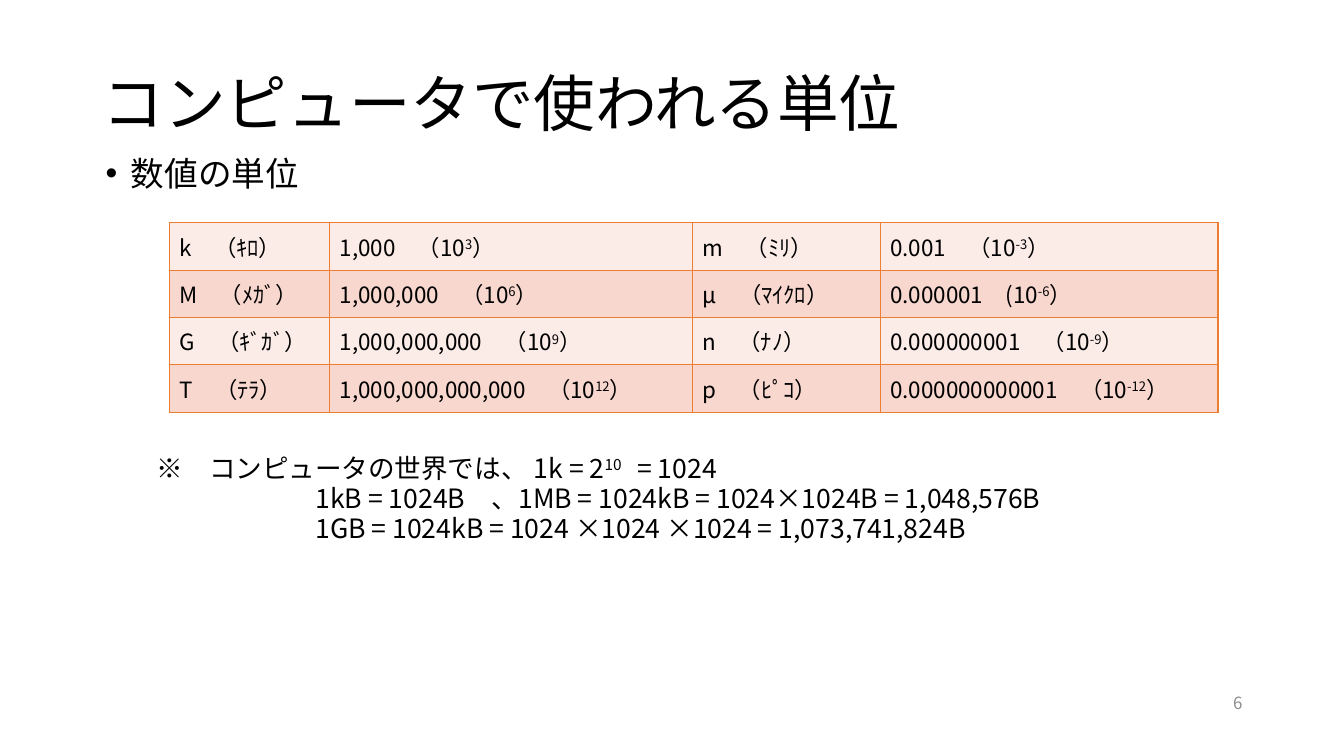
import pptx
import pptx.dml.color
import pptx.enum.text
import pptx.oxml.ns
import pptx.util
from lxml import etree

Inches = pptx.util.Inches
Pt = pptx.util.Pt
RGBColor = pptx.dml.color.RGBColor
ALIGN = pptx.enum.text.PP_ALIGN
ANCHOR = pptx.enum.text.MSO_ANCHOR
qn = pptx.oxml.ns.qn

FONT = "Noto Sans CJK JP"
BLACK = RGBColor(0x00, 0x00, 0x00)
GRAY = RGBColor(0x8C, 0x8C, 0x8C)
ORANGE = RGBColor(0xED, 0x7D, 0x31)
BAND_FILLS = (RGBColor(0xFC, 0xEC, 0xE8), RGBColor(0xF8, 0xD7, 0xCE))

COLUMN_WIDTHS = (1.59, 3.6, 1.86, 3.35)
ROW_HEIGHT = 0.47

# Text between a pair of ^ marks is superscript
UNITS = (
    ("k　（ｷﾛ）", "1,000　（10^3^）", "m　（ﾐﾘ）", "0.001　（10^-3^）"),
    ("M　（ﾒｶﾞ）", "1,000,000　（10^6^）", "μ　（ﾏｲｸﾛ）", "0.000001　(10^-6^）"),
    ("G　（ｷﾞｶﾞ）", "1,000,000,000　（10^9^）", "n　（ﾅﾉ）", "0.000000001　（10^-9^）"),
    ("T　（ﾃﾗ）", "1,000,000,000,000　（10^12^）", "p　（ﾋﾟｺ）", "0.000000000001　（10^-12^）"),
)
# Binary notes: left indent in inches, text
NOTES = (
    (0.5, "※　コンピュータの世界では、 1k = 2^10　^= 1024"),
    (2.08, "1kB = 1024B　、1MB = 1024kB = 1024×1024B = 1,048,576B"),
    (2.08, "1GB = 1024kB = 1024 ×1024 ×1024 = 1,073,741,824B"),
)


def write(paragraph, text, size, color=BLACK, align=ALIGN.LEFT, spacing=1.0,
          before=0, indent=0, hanging=0, bullet=None):
    """Fill one paragraph with formatted text."""
    properties = paragraph._p.get_or_add_pPr()
    properties.set("marL", str(Inches(indent)))
    properties.set("indent", str(-Inches(hanging)))
    if bullet:
        etree.SubElement(properties, qn("a:buFont")).set("typeface", "Arial")
        etree.SubElement(properties, qn("a:buChar")).set("char", bullet)
    paragraph.alignment = align
    paragraph.line_spacing = spacing
    paragraph.space_before = Pt(before)
    for position, part in enumerate(text.split("^")):
        run = paragraph.add_run()
        run.text = part
        run.font.size = Pt(size)
        run.font.name = FONT
        run.font.color.rgb = color
        run_properties = run.font._element
        etree.SubElement(run_properties, qn("a:ea")).set("typeface", FONT)
        if position % 2:
            run_properties.set("baseline", "30000")


def add_frame(slide, box, anchor=ANCHOR.TOP):
    frame = slide.shapes.add_textbox(*map(Inches, box)).text_frame
    frame.word_wrap = True
    frame.vertical_anchor = anchor
    return frame


def add_title(slide, box):
    frame = add_frame(slide, box, ANCHOR.MIDDLE)
    write(frame.paragraphs[0], "コンピュータで使われる単位", size=44, spacing=0.9)


def add_heading(slide, box):
    frame = add_frame(slide, box)
    write(frame.paragraphs[0], "数値の単位", size=24, spacing=0.9,
          indent=0.25, hanging=0.25, bullet="•")


def add_cell_borders(cell):
    properties = cell._tc.get_or_add_tcPr()
    for side in ("a:lnL", "a:lnR", "a:lnT", "a:lnB"):
        line = etree.SubElement(properties, qn(side))
        line.set("w", str(Pt(1)))
        fill = etree.SubElement(line, qn("a:solidFill"))
        etree.SubElement(fill, qn("a:srgbClr")).set("val", str(ORANGE))


def add_unit_table(slide, left, top):
    table = slide.shapes.add_table(
        len(UNITS), len(COLUMN_WIDTHS), Inches(left), Inches(top),
        Inches(sum(COLUMN_WIDTHS)), Inches(ROW_HEIGHT * len(UNITS))).table
    table.first_row = False
    table.horz_banding = False
    for column, width in zip(table.columns, COLUMN_WIDTHS):
        column.width = Inches(width)
    for row_number, unit_row in enumerate(UNITS):
        table.rows[row_number].height = Inches(ROW_HEIGHT)
        for column_number, text in enumerate(unit_row):
            cell = table.cell(row_number, column_number)
            add_cell_borders(cell)
            cell.fill.solid()
            cell.fill.fore_color.rgb = BAND_FILLS[row_number % 2]
            cell.vertical_anchor = ANCHOR.MIDDLE
            write(cell.text_frame.paragraphs[0], text, size=16)


def add_notes_on_binary(slide, box):
    frame = add_frame(slide, box)
    for number, (indent, text) in enumerate(NOTES):
        paragraph = frame.add_paragraph() if number else frame.paragraphs[0]
        write(paragraph, text, size=19, spacing=0.9, indent=indent,
              before=1 if number else 0)


def add_page_number(slide, box):
    frame = add_frame(slide, box, ANCHOR.MIDDLE)
    write(frame.paragraphs[0], "6", size=12, color=GRAY, align=ALIGN.RIGHT)


def main():
    presentation = pptx.Presentation()
    presentation.slide_width = Inches(13.33)
    presentation.slide_height = Inches(7.5)
    slide = presentation.slides.add_slide(presentation.slide_layouts[6])
    add_title(slide, (0.92, 0.33, 11.5, 1.45))
    add_heading(slide, (0.95, 1.51, 11.13, 0.6))
    add_unit_table(slide, 1.68, 2.21)
    add_notes_on_binary(slide, (0.95, 4.47, 11.13, 1.25))
    add_page_number(slide, (9.42, 6.77, 3, 0.4))
    presentation.save("out.pptx")


if __name__ == "__main__":
    main()
